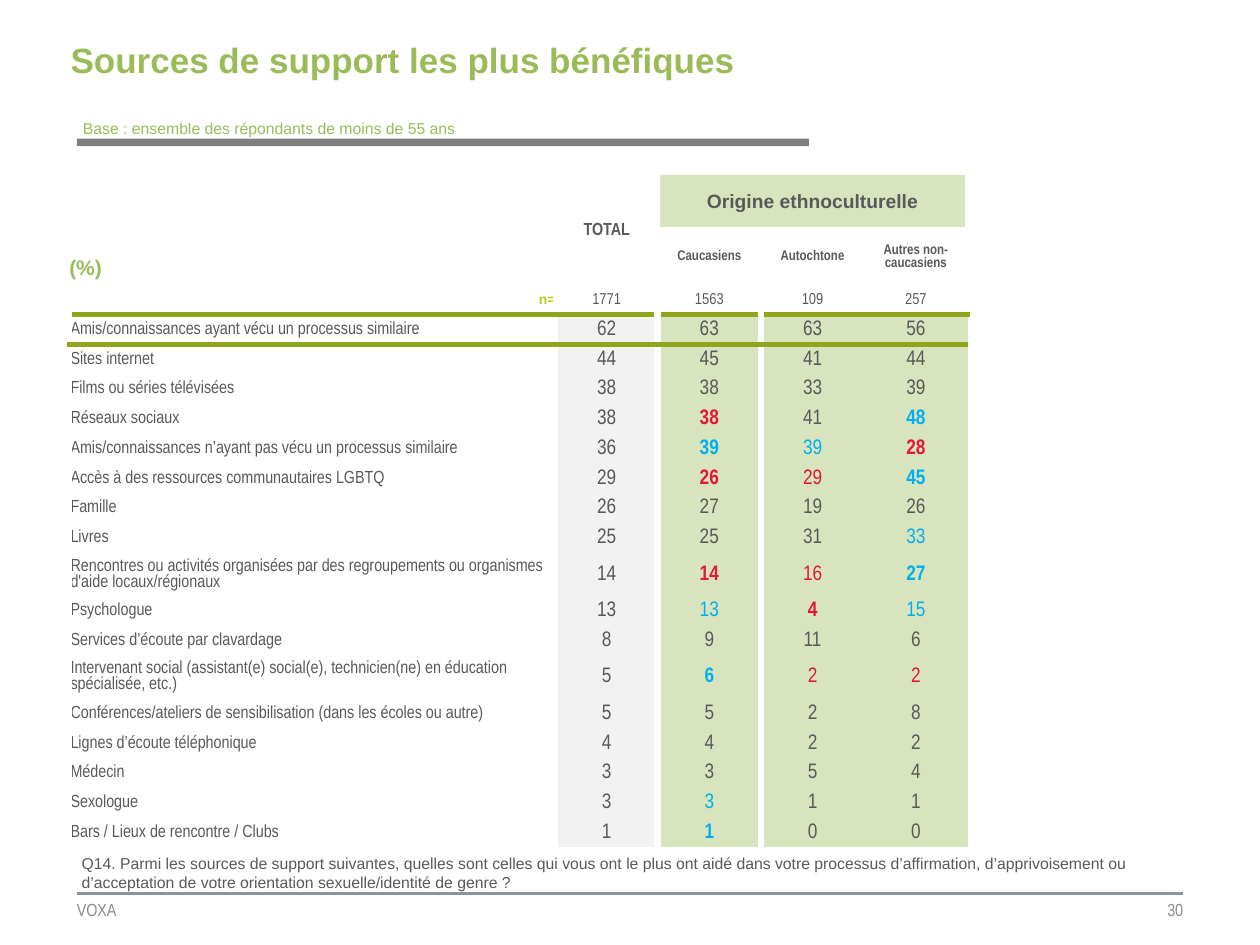
"""Builds the slide on the most helpful sources of support by ethnocultural origin."""
import dataclasses

import lxml.etree
import pptx
import pptx.dml.color
import pptx.enum.shapes
import pptx.enum.text
import pptx.oxml.ns
import pptx.util

Inches = pptx.util.Inches
Align = pptx.enum.text.PP_ALIGN
Anchor = pptx.enum.text.MSO_ANCHOR


@dataclasses.dataclass(frozen=True)
class Theme:
    sans: str = "Arial"
    narrow: str = "Arial Narrow"
    green: str = "9BBB59"
    pale_green: str = "D7E4BD"
    rule_green: str = "91A51B"
    lime: str = "B5CC22"
    ink: str = "595959"
    muted: str = "8C8C8C"
    bar: str = "7F7F7F"
    footer_rule: str = "88959E"
    pale_grey: str = "F2F2F2"
    white: str = "FFFFFF"
    higher: str = "00B0F0"
    lower: str = "E31836"
    title: int = 20
    figure: int = 12
    group: int = 11
    label: int = 10
    note: int = 9
    column: int = 8
    gap: float = 3
    wide_gap: float = 4.5
    plain_table: str = "{2D5ABB26-0587-4C30-8999-92F81FD0307C}"


class SlideBuilder:
    """Holds the theme and the slide being built."""

    def __init__(self, theme, slide):
        self.theme = theme
        self.slide = slide

    def rgb(self, color):
        return pptx.dml.color.RGBColor.from_string(color)

    def fill_text(self, frame, text, size, color, font, bold=False, align=Align.LEFT, spacing=None):
        frame.text = text
        paragraph = frame.paragraphs[0]
        paragraph.alignment = align
        if spacing:
            paragraph.line_spacing = spacing
        for run in paragraph.runs:
            run.font.size = pptx.util.Pt(size)
            run.font.name = font
            run.font.bold = bold
            run.font.color.rgb = self.rgb(color)

    def text(self, left, top, width, height, text, size, color, font,
             bold=False, align=Align.LEFT, inset=True, wrap=True):
        box = self.slide.shapes.add_textbox(Inches(left), Inches(top), Inches(width), Inches(height))
        frame = box.text_frame
        frame.word_wrap = wrap
        if not inset:
            frame.margin_left = frame.margin_right = frame.margin_top = frame.margin_bottom = 0
            frame.vertical_anchor = Anchor.MIDDLE
        self.fill_text(frame, text, size, color, font, bold, align)

    def bar(self, left, top, width, height, color):
        bar = self.slide.shapes.add_shape(
            pptx.enum.shapes.MSO_SHAPE.RECTANGLE,
            Inches(left), Inches(top), Inches(width), Inches(height))
        bar.shadow.inherit = False
        bar.fill.solid()
        bar.fill.fore_color.rgb = self.rgb(color)
        bar.line.fill.background()

    def rule(self, left, right, top, color, weight):
        rule = self.slide.shapes.add_connector(
            pptx.enum.shapes.MSO_CONNECTOR.STRAIGHT,
            Inches(left), Inches(top), Inches(right), Inches(top))
        rule.line.color.rgb = self.rgb(color)
        rule.line.width = pptx.util.Pt(weight)
        lxml.etree.SubElement(rule._element.spPr, pptx.oxml.ns.qn("a:effectLst"))

    def table(self, left, top, widths, heights):
        frame = self.slide.shapes.add_table(
            len(heights), len(widths), Inches(left), Inches(top),
            Inches(sum(widths)), Inches(sum(heights)))
        table = frame.table
        table.first_row = table.horz_banding = False
        table._tbl.tblPr[0].text = self.theme.plain_table
        for column, width in zip(table.columns, widths):
            column.width = Inches(width)
        for row, height in zip(table.rows, heights):
            row.height = Inches(height)
        for cell in table.iter_cells():
            cell.margin_left = cell.margin_right = cell.margin_top = Inches(0.01)
            cell.margin_bottom = 0
            cell.vertical_anchor = Anchor.MIDDLE
            ending = lxml.etree.SubElement(
                cell.text_frame.paragraphs[0]._p, pptx.oxml.ns.qn("a:endParaRPr"))
            ending.set("sz", str(self.theme.column * 100))
        return table

    def borders(self, cell, **sides):
        properties = cell._tc.get_or_add_tcPr()
        for side in "LRTB":
            if side not in sides:
                continue
            color, weight = sides[side]
            line = lxml.etree.SubElement(
                properties, pptx.oxml.ns.qn(f"a:ln{side}"), w=str(int(pptx.util.Pt(weight))))
            fill = lxml.etree.SubElement(line, pptx.oxml.ns.qn("a:solidFill"))
            lxml.etree.SubElement(fill, pptx.oxml.ns.qn("a:srgbClr"), val=color)

    def shade(self, cell, color=None):
        if color:
            cell.fill.solid()
            cell.fill.fore_color.rgb = self.rgb(color)
        else:
            cell.fill.background()


SAMPLES = ["1771", "1563", "109", "257"]
ORIGINS = ["Caucasiens", "Autochtone", "Autres non-caucasiens"]
SOURCES = [
    ("Amis/connaissances ayant vécu un processus similaire", "62 63 63 56"),
    ("Sites internet", "44 45 41 44"),
    ("Films ou séries télévisées", "38 38 33 39"),
    ("Réseaux sociaux", "38 38R 41 48B"),
    ("Amis/connaissances n’ayant pas vécu un processus similaire", "36 39B 39b 28R"),
    ("Accès à des ressources communautaires LGBTQ", "29 26R 29r 45B"),
    ("Famille", "26 27 19 26"),
    ("Livres", "25 25 31 33b"),
    ("Rencontres ou activités organisées par des regroupements ou organismes "
     "d'aide locaux/régionaux", "14 14R 16r 27B"),
    ("Psychologue", "13 13b 4R 15b"),
    ("Services d’écoute par clavardage", "8 9 11 6"),
    ("Intervenant social (assistant(e) social(e), technicien(ne) en éducation "
     "spécialisée, etc.)", "5 6B 2r 2r"),
    ("Conférences/ateliers de sensibilisation (dans les écoles ou autre)", "5 5 2 8"),
    ("Lignes d’écoute téléphonique", "4 4 2 2"),
    ("Médecin", "3 3 5 4"),
    ("Sexologue", "3 3b 1 1"),
    ("Bars / Lieux de rencontre / Clubs", "1 1B 0 0"),
]


def add_support_table(builder):
    theme = builder.theme
    heights = [0.21, 0.2, 0.47, 0.21]
    first = len(heights)
    heights += [0.27 if len(label) > 70 else 0.236 for label, _ in SOURCES]
    table = builder.table(0.55, 1.39, [3.86, 0.81] + [0.82] * 3, heights)
    gap, wide = (theme.white, theme.gap), (theme.white, theme.wide_gap)
    green = (theme.rule_green, theme.gap)

    for row in range(first):
        for column in range(5):
            cell = table.cell(row, column)
            sides = {"R": gap} if column == 0 else {"L": gap, "R": gap}
            if row == first - 1:
                sides["B"] = green
            builder.borders(cell, **sides)
            builder.shade(cell, theme.pale_green if row < 2 and column > 1 else None)

    def head(row, column, text, size, color=theme.ink, font=theme.narrow, bold=True,
             align=Align.CENTER, spacing=None):
        builder.fill_text(table.cell(row, column).text_frame, text, size, color, font,
                          bold, align, spacing)

    for start, end in [((0, 1), (2, 1)), ((0, 2), (1, 4)), ((1, 0), (2, 0))]:
        table.cell(*start).merge(table.cell(*end))
    head(0, 1, "TOTAL", theme.label)
    head(0, 2, "Origine ethnoculturelle", theme.group, font=theme.sans)
    head(1, 0, "(%)", theme.figure, theme.green, theme.sans, align=Align.LEFT, spacing=0.95)
    head(3, 0, "n=", theme.column, theme.lime, theme.sans, align=Align.RIGHT, spacing=0.95)
    for unit in (table.cell(1, 0), table.cell(3, 0)):
        unit.margin_left = unit.margin_right = 0
        unit.margin_top = unit.margin_bottom = Inches(0.05)
    table.cell(1, 0).vertical_anchor = Anchor.BOTTOM
    for column, origin in enumerate(ORIGINS, 2):
        head(2, column, origin, theme.column)
    for column, sample in enumerate(SAMPLES, 1):
        head(3, column, sample, theme.note, bold=False)

    edges = [{"L": gap, "R": gap}, {"L": gap, "R": wide}, {"L": wide}, {}, {}]
    shades = [None, theme.pale_grey] + [theme.pale_green] * 3
    marks = {"b": theme.higher, "r": theme.lower}
    for row, (label, scores) in enumerate(SOURCES, first):
        top = {"T": green} if row == first else {}
        for column, text in enumerate([label] + scores.split()):
            cell = table.cell(row, column)
            builder.borders(cell, **edges[column], **top)
            builder.shade(cell, shades[column])
            if column == 0:
                builder.fill_text(cell.text_frame, text, theme.label, theme.ink, theme.narrow)
            else:
                builder.fill_text(cell.text_frame, text.rstrip("bBrR"), theme.figure,
                                  marks.get(text[-1].lower(), theme.ink), theme.narrow,
                                  text[-1].isupper(), Align.CENTER)


def main():
    deck = pptx.Presentation()
    deck.slide_width, deck.slide_height = Inches(10), Inches(7.5)
    theme = Theme()
    builder = SlideBuilder(theme, deck.slides.add_slide(deck.slide_layouts[6]))
    builder.rule(0.61, 9.39, 7.09, theme.footer_rule, 1.5)
    builder.bar(0.61, 1.1, 5.81, 0.06, theme.bar)
    builder.text(0.61, 7.09, 2.8, 0.26, "VOXA", theme.label, theme.muted, theme.narrow, inset=False)
    builder.text(6.55, 7.09, 2.84, 0.26, "30", theme.label, theme.muted, theme.narrow,
                 align=Align.RIGHT, inset=False)
    builder.text(0.56, 0.13, 7.15, 0.69, "Sources de support les plus bénéfiques",
                 theme.title, theme.green, theme.sans, bold=True, inset=False)
    add_support_table(builder)
    builder.text(0.55, 6.73, 8.55, 0.4,
                 "Q14. Parmi les sources de support suivantes, quelles sont celles qui vous ont le "
                 "plus ont aidé dans votre processus d’affirmation, d’apprivoisement ou "
                 "d’acceptation de votre orientation sexuelle/identité de genre ?",
                 theme.note, theme.ink, theme.sans)
    builder.text(0.56, 0.89, 3.18, 0.25, "Base : ensemble des répondants de moins de 55 ans",
                 theme.note, theme.green, theme.sans, wrap=False)
    deck.save("out.pptx")


if __name__ == "__main__":
    main()
